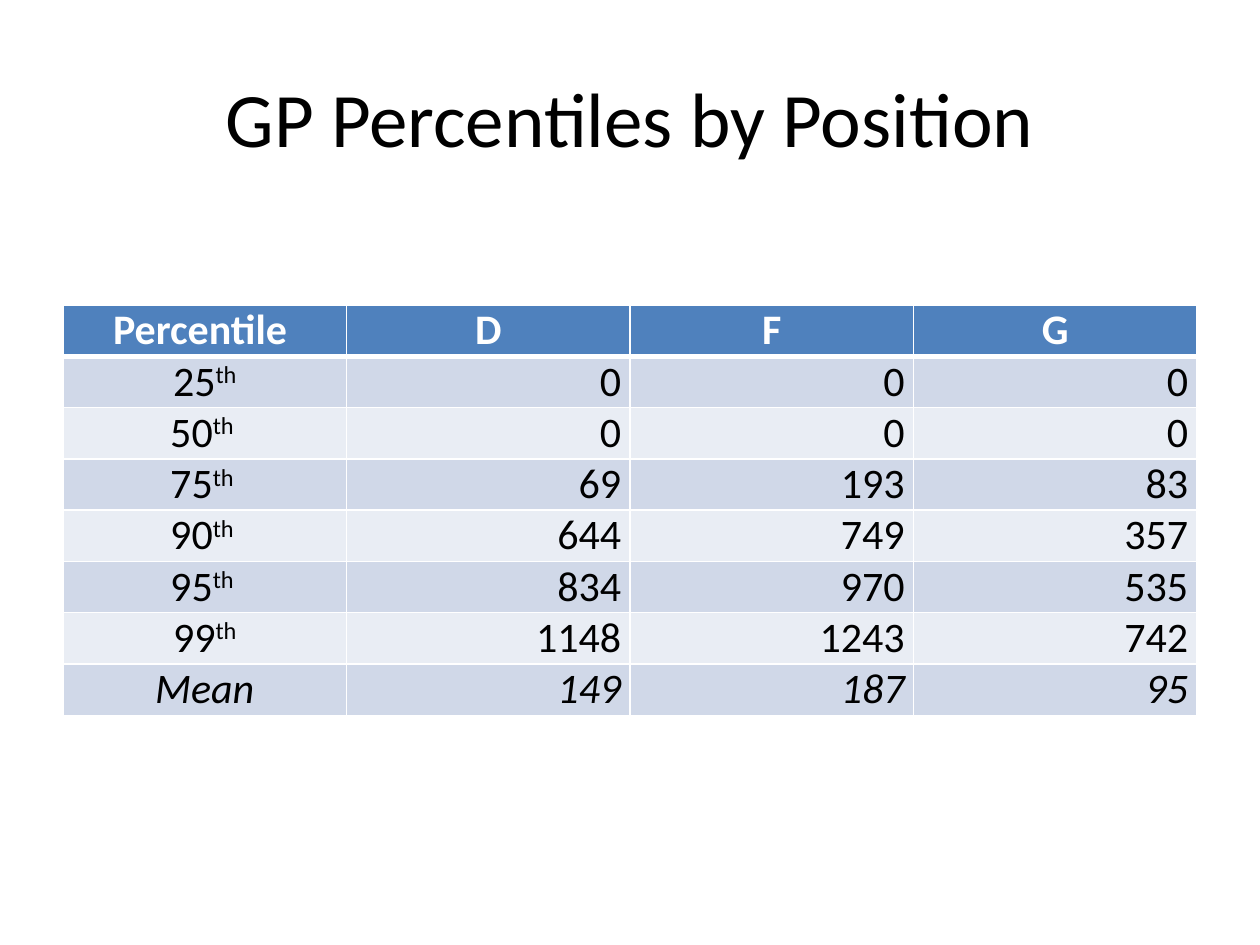
import pptx
import pptx.dml.color
import pptx.enum.text
import pptx.oxml
import pptx.oxml.ns
import pptx.util

RGB = pptx.dml.color.RGBColor
ALIGN = pptx.enum.text.PP_ALIGN
WHITE = RGB(0xFF, 0xFF, 0xFF)
BLACK = RGB(0, 0, 0)
BLUE = RGB(0x4F, 0x81, 0xBD)
BANDS = (RGB(0xD0, 0xD8, 0xE8), RGB(0xE9, 0xED, 0xF4))
FONT = "Calibri"
WIDE, HIGH = pptx.util.Inches(10), pptx.util.Inches(7.5)
LEFT, SPAN = 0.05, 0.9
HEAD = ["Percentile\u00a0", "D", "F", "G"]
ROWS = [
    ["25|th", 0, 0, 0],
    ["50|th ", 0, 0, 0],
    ["75|th ", 69, 193, 83],
    ["90|th ", 644, 749, 357],
    ["95|th ", 834, 970, 535],
    ["99|th", 1148, 1243, 742],
    ["Mean", 149, 187, 95],
]


def style(run, size, color, bold=False, slant=False):
    """Set the font of a run."""
    font = run.font
    font.name, font.size = FONT, pptx.util.Pt(size)
    font.color.rgb = color
    font.bold, font.italic = bold, slant


def add_title(slide, text):
    """Place and fill the title."""
    title = slide.shapes.title
    title.left, title.top = int(WIDE * LEFT), int(HIGH * 0.04)
    title.width, title.height = int(WIDE * SPAN), int(HIGH / 6)
    title.text_frame.text = text
    title.text_frame.vertical_anchor = pptx.enum.text.MSO_ANCHOR.MIDDLE
    para = title.text_frame.paragraphs[0]
    para.alignment = ALIGN.CENTER
    style(para.runs[0], 44, BLACK)


def add_edge(cell, side, width):
    """Draw one white border of a cell."""
    space = pptx.oxml.ns.nsdecls("a")
    cell._tc.get_or_add_tcPr().append(pptx.oxml.parse_xml(
        f'<a:ln{side} {space} w="{pptx.util.Pt(width)}"><a:solidFill>'
        f'<a:srgbClr val="{WHITE}"/></a:solidFill></a:ln{side}>'))


def fill_cell(cell, value, row, col):
    """Write a cell with its borders, fill and text."""
    head = row == 0
    cell.margin_left = cell.margin_right = pptx.util.Inches(0.07)
    cell.margin_top = cell.margin_bottom = 0
    for side in "LRTB":
        thick = (row, side) in ((0, "B"), (1, "T"))
        add_edge(cell, side, 3 if thick else 1)
    cell.fill.solid()
    cell.fill.fore_color.rgb = BLUE if head else BANDS[(row - 1) % 2]
    para = cell.text_frame.paragraphs[0]
    para.alignment = ALIGN.CENTER if head or col == 0 else ALIGN.RIGHT
    for rank, part in enumerate(str(value).split("|")):
        run = para.add_run()
        run.text = part
        style(run, 24, WHITE if head else BLACK, head, row == len(ROWS))
        if rank:
            run.font._element.set("baseline", "30000")


def add_grid(slide, rows):
    """Add the table of percentiles."""
    table = slide.shapes.add_table(
        len(rows), len(rows[0]), int(WIDE * LEFT), pptx.util.Inches(2.42),
        int(WIDE * SPAN), pptx.util.Inches(3.24)).table
    for row, line in enumerate(rows):
        for col, value in enumerate(line):
            fill_cell(table.cell(row, col), value, row, col)


def main():
    """Build and save the slide."""
    deck = pptx.Presentation()
    deck.slide_width, deck.slide_height = WIDE, HIGH
    slide = deck.slides.add_slide(deck.slide_layouts[5])
    add_title(slide, "GP Percentiles by Position")
    add_grid(slide, [HEAD] + ROWS)
    deck.save("out.pptx")


if __name__ == "__main__":
    main()
